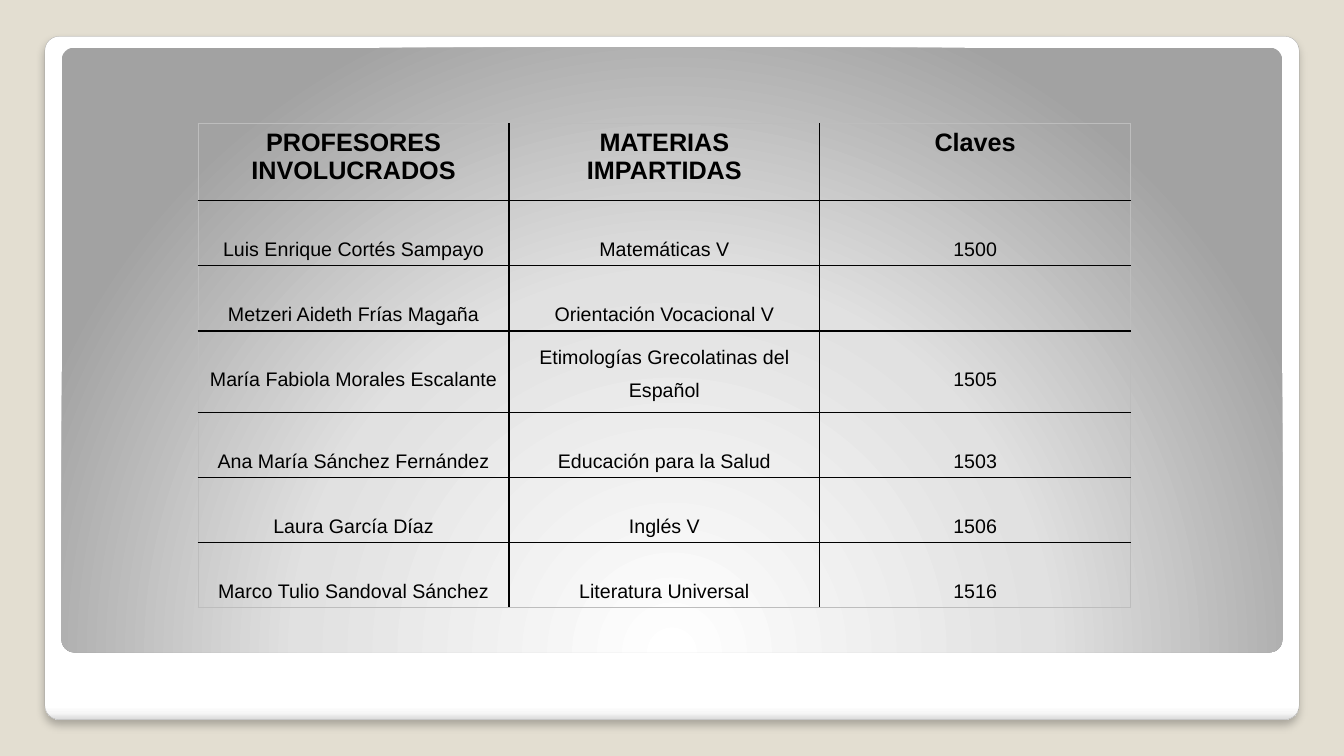
from lxml import etree
from pptx import Presentation
from pptx.dml.color import RGBColor
from pptx.enum.shapes import MSO_SHAPE
from pptx.enum.text import PP_ALIGN
from pptx.oxml import parse_xml
from pptx.oxml.ns import nsdecls, qn
from pptx.util import Pt

ROUNDED = MSO_SHAPE.ROUNDED_RECTANGLE
CENTER = PP_ALIGN.CENTER

# Content
HEADINGS = ("PROFESORES INVOLUCRADOS", "MATERIAS IMPARTIDAS", "Claves")
TEACHERS = [
    ("Luis Enrique Cortés Sampayo", "Matemáticas V", "1500"),
    ("Metzeri Aideth Frías Magaña", "Orientación Vocacional V", ""),
    ("María Fabiola Morales Escalante", "Etimologías Grecolatinas del Español", "1505"),
    ("Ana María Sánchez Fernández", "Educación para la Salud", "1503"),
    ("Laura García Díaz", "Inglés V", "1506"),
    ("Marco Tulio Sandoval Sánchez", "Literatura Universal", "1516"),
]
TWO_LINE_SUBJECT = "Etimologías Grecolatinas del Español"

# Layout and colours
FONT, BLACK, GREY = "Arial", "000000", "BDBDBD"
HEADING_HEIGHT, ROW_HEIGHT, TALL_HEIGHT = 55, 46.4, 58.2
COLUMN_WIDTH = 222
TABLE_LEFT, TABLE_TOP = 141.6, 88.3
FRAME_STOPS = [(0, "FFFFFF"), (98, "FFFFFF"), (99, "F7F7F7"), (100, "DADADA")]
PANEL_STOPS = [(0, "FFFFFF"), (55, "E1E1E1"), (100, "A2A2A2")]
DOWNWARD = '<a:lin ang="5400000" scaled="0"/>'
FROM_BELOW = ('<a:path path="circle"><a:fillToRect l="50000" t="175000" '
              'r="50000" b="-75000"/></a:path>')


def color(hex_text):
    return RGBColor.from_string(hex_text)


def add_panel(slide, box, stops, direction):
    panel = slide.shapes.add_shape(ROUNDED, *(Pt(v) for v in box))
    panel.adjustments[0] = 0.021
    panel.shadow.inherit = False
    panel.line.fill.background()
    stop_xml = "".join(f'<a:gs pos="{pos * 1000}"><a:srgbClr val="{tone}"/></a:gs>'
                       for pos, tone in stops)
    panel.fill.background()
    no_fill = panel.fill._xPr.find(qn("a:noFill"))
    no_fill.getparent().replace(no_fill, parse_xml(
        f'<a:gradFill {nsdecls("a")} rotWithShape="1"><a:gsLst>{stop_xml}</a:gsLst>'
        f'{direction}</a:gradFill>'))
    return panel


def add_soft_shadow(panel):
    effects = panel._element.spPr.find(qn("a:effectLst"))
    shadow = etree.SubElement(effects, qn("a:outerShdw"), blurRad=str(Pt(6)),
                              dist=str(Pt(4)), dir="5400000", algn="t", rotWithShape="0")
    tone = etree.SubElement(shadow, qn("a:srgbClr"), val=BLACK)
    etree.SubElement(tone, qn("a:alpha"), val="25000")


def set_borders(cell, sides):
    """Borders go ahead of the fill, in the order left, right, top, bottom."""
    properties = cell._tc.get_or_add_tcPr()
    for place, (side, tone) in enumerate(sides):
        properties.insert(place, parse_xml(
            f'<a:{side} {nsdecls("a")} w="{Pt(1)}"><a:solidFill>'
            f'<a:srgbClr val="{tone}"/></a:solidFill></a:{side}>'))


def write_cell(cell, text, heading):
    paragraph = cell.text_frame.paragraphs[0]
    paragraph.alignment = CENTER
    if not heading:
        paragraph.line_spacing = 1.5 if text == TWO_LINE_SUBJECT else 2.5
    if not text:
        paragraph.font.size = Pt(14)
        return
    run = paragraph.add_run()
    run.text = text
    run.font.name = FONT
    run.font.size = Pt(18 if heading else 14)
    run.font.bold = heading
    run.font.color.rgb = color(BLACK)


prs = Presentation()
prs.slide_width, prs.slide_height = Pt(960), Pt(540)
slide = prs.slides.add_slide(prs.slide_layouts[6])
slide.background.fill.solid()
slide.background.fill.fore_color.rgb = color("E3DED1")

# White frame and grey panel
frame = add_panel(slide, (32, 26, 896, 488), FRAME_STOPS, DOWNWARD)
frame.line.color.rgb = color("A4A4A4")
frame.line.width = Pt(0.16)
add_soft_shadow(frame)
add_panel(slide, (44, 34, 872, 432), PANEL_STOPS, FROM_BELOW)

# Table of teachers
rows = [HEADINGS] + TEACHERS
heights = [HEADING_HEIGHT] + [TALL_HEIGHT if TWO_LINE_SUBJECT in row else ROW_HEIGHT
                              for row in TEACHERS]
last_row, last_column = len(rows) - 1, len(HEADINGS) - 1
staff = slide.shapes.add_table(
    len(rows), len(HEADINGS), Pt(TABLE_LEFT), Pt(TABLE_TOP),
    Pt(COLUMN_WIDTH * len(HEADINGS)), Pt(sum(heights))).table
staff.first_row = staff.horz_banding = False
for column in staff.columns:
    column.width = Pt(COLUMN_WIDTH)
for r, (texts, height) in enumerate(zip(rows, heights)):
    staff.rows[r].height = Pt(height)
    for c, text in enumerate(texts):
        cell = staff.cell(r, c)
        cell.fill.background()
        write_cell(cell, text, heading=r == 0)
        outer = {"lnL": c == 0, "lnR": c == last_column,
                 "lnT": r == 0, "lnB": r == last_row}
        set_borders(cell, [(side, GREY if edge else BLACK) for side, edge in outer.items()])

prs.save("out.pptx")
